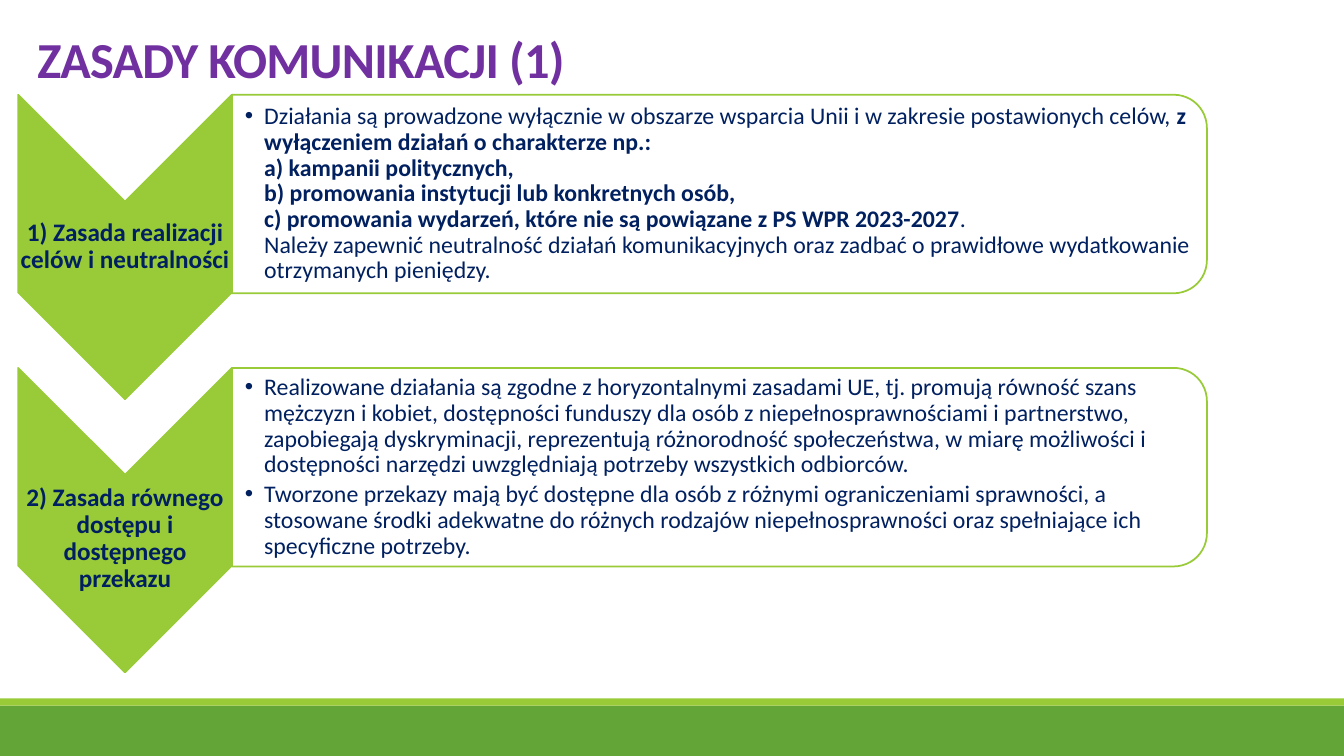
from dataclasses import dataclass

from lxml.etree import SubElement
from pptx import Presentation
from pptx.dml.color import RGBColor
from pptx.enum.shapes import MSO_SHAPE
from pptx.enum.text import MSO_ANCHOR, MSO_AUTO_SIZE, PP_ALIGN
from pptx.oxml.ns import qn
from pptx.util import Inches, Pt


@dataclass(frozen=True)
class Theme:
    """Colours, font and type sizes of the slide."""
    face: str = "Calibri"
    purple: str = "7030A0"
    navy: str = "002060"
    lime: str = "99CB38"
    green: str = "63A537"
    white: str = "FFFFFF"
    head: int = 36
    label: int = 18
    body: int = 17
    line: float = 1.25


class Board:
    """Draws elements on one slide in one theme."""

    def __init__(self, slide, theme):
        """Keep the slide and its theme."""
        self.slide, self.theme = slide, theme

    def place(self, shape, box):
        """Move a shape to a box in inches."""
        shape.left, shape.top, shape.width, shape.height = map(Inches, box)

    def setup(self, shape, anchor, pad):
        """Prepare a text frame and return it."""
        frame = shape.text_frame
        frame.word_wrap, frame.auto_size = True, MSO_AUTO_SIZE.NONE
        frame.vertical_anchor = anchor
        frame.margin_left, frame.margin_top, frame.margin_right, frame.margin_bottom = map(Inches, pad)
        return frame

    def format(self, para, size, color, bold, align=PP_ALIGN.LEFT, space=0.9, after=0):
        """Set the font and spacing of a paragraph."""
        font = para.font
        font.name, font.size, font.bold = self.theme.face, Pt(size), bold
        font.color.rgb = RGBColor.from_string(color)
        para.alignment, para.line_spacing = align, space
        para.space_before, para.space_after = Pt(0), Pt(after)

    def shape(self, kind, box, fill, line=None, turn=0):
        """Add a preset shape, turned about its centre."""
        item = self.slide.shapes.add_shape(kind, *map(Inches, box))
        item.rotation, item.shadow.inherit = turn, False
        item.fill.solid()
        item.fill.fore_color.rgb = RGBColor.from_string(fill)
        if line:
            item.line.color.rgb = RGBColor.from_string(line)
            item.line.width = Pt(self.theme.line)
        else:
            item.line.fill.background()
        return item

    def upright(self, kind, box, fill):
        """Add an outlined shape turned a quarter to fill a box."""
        left, top, wide, high = box
        shift = (wide - high) / 2
        turned = (left + shift, top - shift, high, wide)
        return self.shape(kind, turned, fill, self.theme.lime, 90)

    def title(self, text, box):
        """Fill the title placeholder."""
        item = self.slide.shapes.title
        self.place(item, box)
        frame = self.setup(item, MSO_ANCHOR.BOTTOM, (0.1, 0.05, 0.1, 0.05))
        para = frame.paragraphs[0]
        run = para.add_run()
        run.text = text
        run.font._element.set("spc", "-50")
        self.format(para, self.theme.head, self.theme.purple, True, space=0.85)

    def label(self, text, box):
        """Add a centred bold label."""
        item = self.slide.shapes.add_textbox(*map(Inches, box))
        para = self.setup(item, MSO_ANCHOR.MIDDLE, [0.01] * 4).paragraphs[0]
        para.text = text
        self.format(para, self.theme.label, self.theme.navy, True, PP_ALIGN.CENTER)

    def list(self, item, points, box):
        """Fill a body placeholder with bullets of (text, bold) lines."""
        self.place(item, box)
        item.element.getparent().append(item.element)
        frame = self.setup(item, MSO_ANCHOR.MIDDLE, (0.13, 0.01, 0.01, 0.01))
        for row, point in enumerate(points):
            para = frame.add_paragraph() if row else frame.paragraphs[0]
            for text, bold in point:
                for part, line in enumerate(text.split("\n")):
                    if part:
                        para.add_line_break()
                    run = para.add_run()
                    run.text, run.font.bold = line, bold
            self.format(para, self.theme.body, self.theme.navy, False, after=3)
            props = para._p.get_or_add_pPr()
            props.set("marL", str(Inches(0.19)))
            props.set("indent", str(-Inches(0.19)))
            bullet = props.makeelement(qn("a:buChar"), {"char": "•"})
            props.find(qn("a:defRPr")).addprevious(bullet)

    def rule(self, top, drop, name, points, item):
        """Add a chevron with its label and the framed list beside it."""
        theme = self.theme
        self.upright(MSO_SHAPE.CHEVRON, (0.18, top, 2.12, 3.02), theme.lime)
        card = self.upright(MSO_SHAPE.ROUND_2_SAME_RECTANGLE, (2.3, top, 9.67, 1.97), theme.white)
        tint = card.fill._xPr.find(qn("a:solidFill"))[0]
        SubElement(tint, qn("a:alpha"), val="90000")
        self.label(name, (0.18, top + 1.05 + drop, 2.12, 0.91))
        self.list(item, points, (2.3, top + 0.1, 9.57, 1.77))


RULES = [
    (0, "1) Zasada realizacji celów i neutralności", [[
        ("Działania są prowadzone wyłącznie w obszarze wsparcia Unii i w zakresie postawionych celów, ", False),
        ("z wyłączeniem działań o charakterze np.:\na) kampanii politycznych,\n"
         "b) promowania instytucji lub konkretnych osób,\n"
         "c) promowania wydarzeń, które nie są powiązane z PS WPR 2023-2027", True),
        (".\nNależy zapewnić neutralność działań komunikacyjnych oraz zadbać o prawidłowe "
         "wydatkowanie otrzymanych pieniędzy.", False)]]),
    (0.19, "2) Zasada równego dostępu i dostępnego przekazu", [
        [("Realizowane działania są zgodne z horyzontalnymi zasadami UE, tj. promują równość szans "
          "mężczyzn i kobiet, dostępności funduszy dla osób z niepełnosprawnościami i partnerstwo, "
          "zapobiegają dyskryminacji, reprezentują różnorodność społeczeństwa, w miarę możliwości i "
          "dostępności narzędzi uwzględniają potrzeby wszystkich odbiorców.", False)],
        [("Tworzone przekazy mają być dostępne dla osób z różnymi ograniczeniami sprawności, a "
          "stosowane środki adekwatne do różnych rodzajów niepełnosprawności oraz spełniające ich "
          "specyficzne potrzeby.", False)]]),
]


def main():
    """Build and save the slide."""
    deck = Presentation()
    deck.slide_width, deck.slide_height = Inches(13.33), Inches(7.5)
    slide = deck.slides.add_slide(deck.slide_layouts[3])
    theme = Theme()
    board = Board(slide, theme)
    board.shape(MSO_SHAPE.RECTANGLE, (0, 7, 13.33, 0.5), theme.green)
    board.shape(MSO_SHAPE.RECTANGLE, (0, 6.93, 13.33, 0.07), theme.lime)
    board.title("ZASADY KOMUNIKACJI (1)", (0.27, 0.12, 13.06, 0.81))
    bodies = [slide.placeholders[1], slide.placeholders[2]]
    for row, (drop, name, points) in enumerate(RULES):
        board.rule(0.94 + 2.71 * row, drop, name, points, bodies[row])
    deck.save("out.pptx")


if __name__ == "__main__":
    main()
